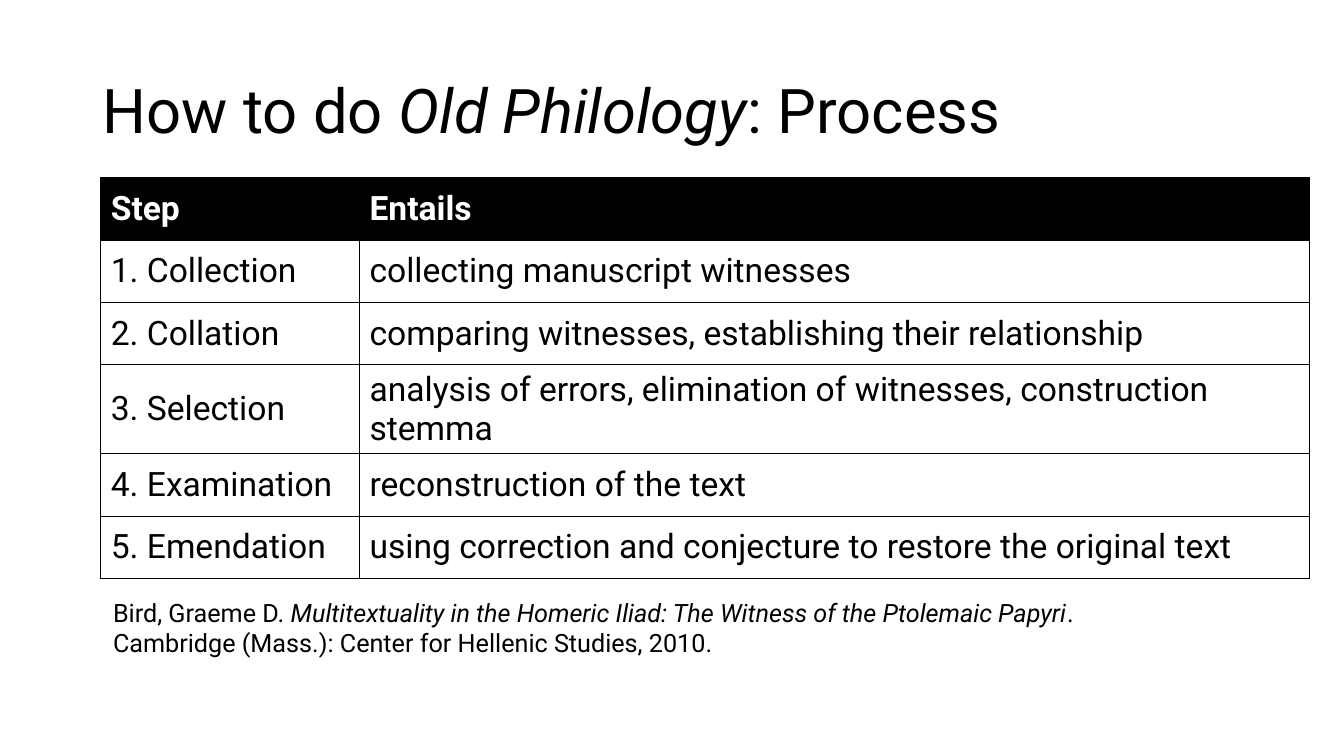
from lxml import etree
from pptx import Presentation
from pptx.dml.color import RGBColor
from pptx.enum.text import MSO_ANCHOR, MSO_AUTO_SIZE, PP_ALIGN
from pptx.oxml.ns import qn
from pptx.util import Cm, Pt

MIDDLE, TOP = MSO_ANCHOR.MIDDLE, MSO_ANCHOR.TOP
LEFT = PP_ALIGN.LEFT
NO_FIT = MSO_AUTO_SIZE.NONE
TITLE_ONLY = 5

COLORS = {"ink": "000000", "paper": "FFFFFF"}

# Text content: each run is (text, italic)
TITLE = [("How to do ", False), ("Old Philology", True), (": Process", False)]
STEPS = [
    ("Step", "Entails"),
    ("1. Collection", "collecting manuscript witnesses"),
    ("2. Collation", "comparing witnesses, establishing their relationship"),
    ("3. Selection", "analysis of errors, elimination of witnesses, construction stemma"),
    ("4. Examination", "reconstruction of the text"),
    ("5. Emendation", "using correction and conjecture to restore the original text"),
]
CITATION = [
    ("Bird, Graeme D. ", False),
    ("Multitextuality in the Homeric Iliad: The Witness of the Ptolemaic Papyri", True),
    (". Cambridge (Mass.): Center for Hellenic Studies, 2010.", False),
]


class SlideBuilder:
    """Holds the style and the current slide."""

    font_name = "Roboto"

    def __init__(self, presentation):
        self.slide = presentation.slides.add_slide(presentation.slide_layouts[TITLE_ONLY])

    def add_runs(self, paragraph, runs, size, color="ink", bold=False):
        paragraph.alignment = LEFT
        for text, italic in runs:
            run = paragraph.add_run()
            run.text = text
            style = {"name": self.font_name, "size": Pt(size), "bold": bold, "italic": italic}
            for attribute, value in style.items():
                setattr(run.font, attribute, value)
            run.font.color.rgb = RGBColor.from_string(COLORS[color])

    def set_frame(self, frame, anchor):
        layout = {"word_wrap": True, "auto_size": NO_FIT, "vertical_anchor": anchor}
        for attribute, value in layout.items():
            setattr(frame, attribute, value)

    def title(self, runs, left, top, width, height):
        heading = self.slide.shapes.title
        place = {"left": left, "top": top, "width": width, "height": height}
        for attribute, value in place.items():
            setattr(heading, attribute, Cm(value))
        self.set_frame(heading.text_frame, MIDDLE)
        paragraph = heading.text_frame.paragraphs[0]
        paragraph.line_spacing = 0.9
        self.add_runs(paragraph, runs, 44)

    def note(self, runs, left, top, width, height):
        box = self.slide.shapes.add_textbox(Cm(left), Cm(top), Cm(width), Cm(height))
        self.set_frame(box.text_frame, TOP)
        self.add_runs(box.text_frame.paragraphs[0], runs, 18)

    def border(self, cell):
        properties = cell._tc.get_or_add_tcPr()
        for side in ("a:lnL", "a:lnR", "a:lnT", "a:lnB"):
            line = etree.SubElement(properties, qn(side), w=str(Pt(1)))
            fill = etree.SubElement(line, qn("a:solidFill"))
            etree.SubElement(fill, qn("a:srgbClr"), val=COLORS["ink"])

    def table(self, rows, left, top, column_widths, row_height):
        grid = self.slide.shapes.add_table(
            len(rows), len(column_widths), Cm(left), Cm(top),
            Cm(sum(column_widths)), Cm(row_height * len(rows))).table
        for column, width in zip(grid.columns, column_widths):
            column.width = Cm(width)
        for row_index, texts in enumerate(rows):
            is_header = row_index == 0
            text_color, fill_color = ("paper", "ink") if is_header else ("ink", "paper")
            for column_index, text in enumerate(texts):
                cell = grid.cell(row_index, column_index)
                self.border(cell)
                cell.fill.solid()
                cell.fill.fore_color.rgb = RGBColor.from_string(COLORS[fill_color])
                cell.vertical_anchor = MIDDLE
                self.add_runs(cell.text_frame.paragraphs[0], [(text, False)], 24,
                              text_color, is_header)


def main():
    presentation = Presentation()
    presentation.slide_width, presentation.slide_height = Cm(33.87), Cm(19.05)
    builder = SlideBuilder(presentation)

    # Heading
    builder.title(TITLE, 2.33, 1.01, 29.21, 3.68)
    # Steps of the process
    builder.table(STEPS, 2.54, 4.48, (6.52, 23.95), 1.57)
    # Source citation
    builder.note(CITATION, 2.6, 14.93, 26.52, 1.8)

    presentation.save("out.pptx")


if __name__ == "__main__":
    main()
